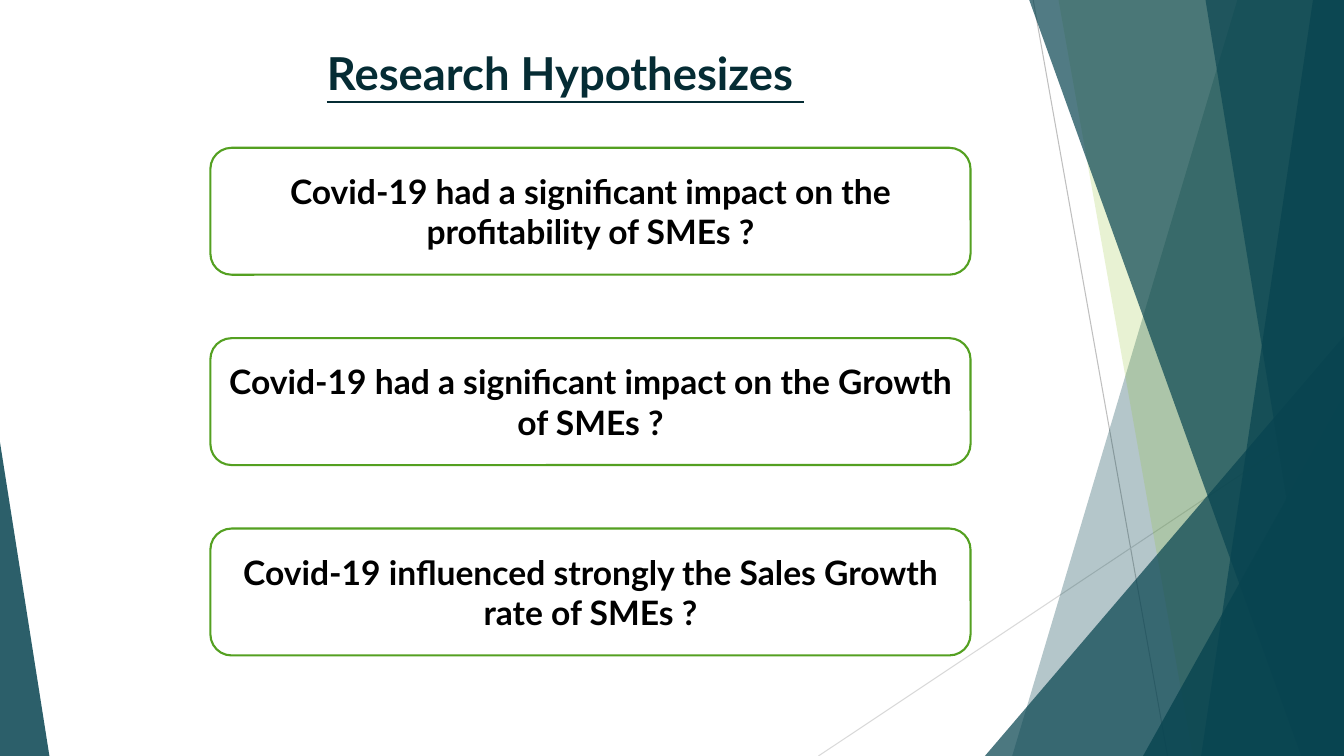
from pptx import Presentation
from pptx.dml.color import RGBColor
from pptx.enum.shapes import MSO_CONNECTOR, MSO_SHAPE
from pptx.enum.text import MSO_ANCHOR, PP_ALIGN
from pptx.oxml.ns import qn
from pptx.util import Pt
from lxml.etree import SubElement

WIDTH, HEIGHT = 960, 540
TEAL = RGBColor(0x08, 0x44, 0x50)
LIME = RGBColor(0x90, 0xC2, 0x26)
GREEN = RGBColor(0x54, 0xA0, 0x21)
TITLE_TEAL = RGBColor(0x05, 0x2C, 0x34)
BLACK = RGBColor(0, 0, 0)
WHITE = RGBColor(255, 255, 255)
GREY = RGBColor(0xBF, 0xBF, 0xBF)
LIGHT_GREY = RGBColor(0xD9, 0xD9, 0xD9)

HYPOTHESES = [
    "Covid-19 had a significant impact on the profitability of SMEs ?",
    "Covid-19 had a significant impact on the Growth of SMEs ?",
    "Covid-19 influenced strongly the Sales Growth rate of SMEs ?",
]


def write_text(shape, text, size, color, underline=None):
    frame = shape.text_frame
    frame.word_wrap = True
    frame.vertical_anchor = MSO_ANCHOR.MIDDLE
    paragraph = frame.paragraphs[0]
    paragraph.alignment = PP_ALIGN.CENTER
    run = paragraph.add_run()
    run.text = text
    font = run.font
    font.name, font.size, font.bold = "Lato", Pt(size), True
    font.underline = underline
    font.color.rgb = color


def fill_translucent(shape, color, opacity):
    """Fill without outline; opacity is a percentage."""
    shape.shadow.inherit = False
    shape.line.fill.background()
    shape.fill.solid()
    shape.fill.fore_color.rgb = color
    color_element = shape.fill._xPr.find(qn("a:solidFill"))[0]
    SubElement(color_element, qn("a:alpha"), val=str(opacity * 1000))


def add_thin_line(slide, start, end, color):
    line = slide.shapes.add_connector(
        MSO_CONNECTOR.STRAIGHT, *(Pt(value) for value in start + end))
    line.line.color.rgb = color
    line.line.width = Pt(0.75)
    SubElement(line._element.spPr, qn("a:effectLst"))


def add_band(slide, top_x, bottom_x, right, color, opacity):
    """Full-height band with a slanted left side, reaching to right."""
    top = -0.6
    builder = slide.shapes.build_freeform(Pt(top_x), Pt(top), scale=1.0)
    corners = [(right, top), (right, HEIGHT), (bottom_x, HEIGHT)]
    builder.add_line_segments([(Pt(x), Pt(y)) for x, y in corners], close=True)
    fill_translucent(builder.convert_to_shape(), color, opacity)


def add_corner_triangle(slide, left, top, width, apex, opacity):
    """Triangle standing on the slide's bottom edge; apex 0 is left, 1 right."""
    triangle = slide.shapes.add_shape(
        MSO_SHAPE.ISOSCELES_TRIANGLE, Pt(left), Pt(top), Pt(width), Pt(HEIGHT - top))
    triangle.adjustments[0] = apex
    fill_translucent(triangle, TEAL, opacity)


def add_decoration(slide, right):
    add_thin_line(slide, (738, 0), (834, HEIGHT), GREY)
    add_thin_line(slide, (right, 290), (584.6, HEIGHT), LIGHT_GREY)
    add_band(slide, 884, 723, right, TEAL, 30)
    add_band(slide, 756, 852, right, LIME, 20)
    add_corner_triangle(slide, 703.5, 240, right - 703.5, 1, 72)
    for top_x, bottom_x, opacity in [(735, 929.5, 70), (938, 858, 70), (861, 949, 65)]:
        add_band(slide, top_x, bottom_x, right, TEAL, opacity)
    add_corner_triangle(slide, 816.5, 283, right - 816.5, 1, 80)
    add_corner_triangle(slide, 0, 316, 35.3, 0, 85)


def add_title(slide, left, top, width, height):
    title = slide.shapes.add_textbox(Pt(left), Pt(top), Pt(width), Pt(height))
    write_text(title, "Research Hypothesizes ", 32.4, TITLE_TEAL, underline=True)


def add_hypotheses(slide, left, top, width, height):
    """Stack equal cards, with gaps half as high as a card."""
    card_height = height / (len(HYPOTHESES) * 1.5 - 0.5)
    for index, text in enumerate(HYPOTHESES):
        card = slide.shapes.add_shape(
            MSO_SHAPE.ROUNDED_RECTANGLE, Pt(left), Pt(top + index * card_height * 1.5),
            Pt(width), Pt(card_height))
        card.shadow.inherit = False
        card.fill.solid()
        card.fill.fore_color.rgb = WHITE
        card.line.color.rgb = GREEN
        card.line.width = Pt(1.5)
        write_text(card, text, 24, BLACK)


def main():
    presentation = Presentation()
    presentation.slide_width, presentation.slide_height = Pt(WIDTH), Pt(HEIGHT)
    slide = presentation.slides.add_slide(presentation.slide_layouts[6])
    add_decoration(slide, WIDTH)
    add_title(slide, 65.5, 28, 677, 47)
    add_hypotheses(slide, 150.3, 105.6, 543, 362.6)
    presentation.save("out.pptx")


if __name__ == "__main__":
    main()
